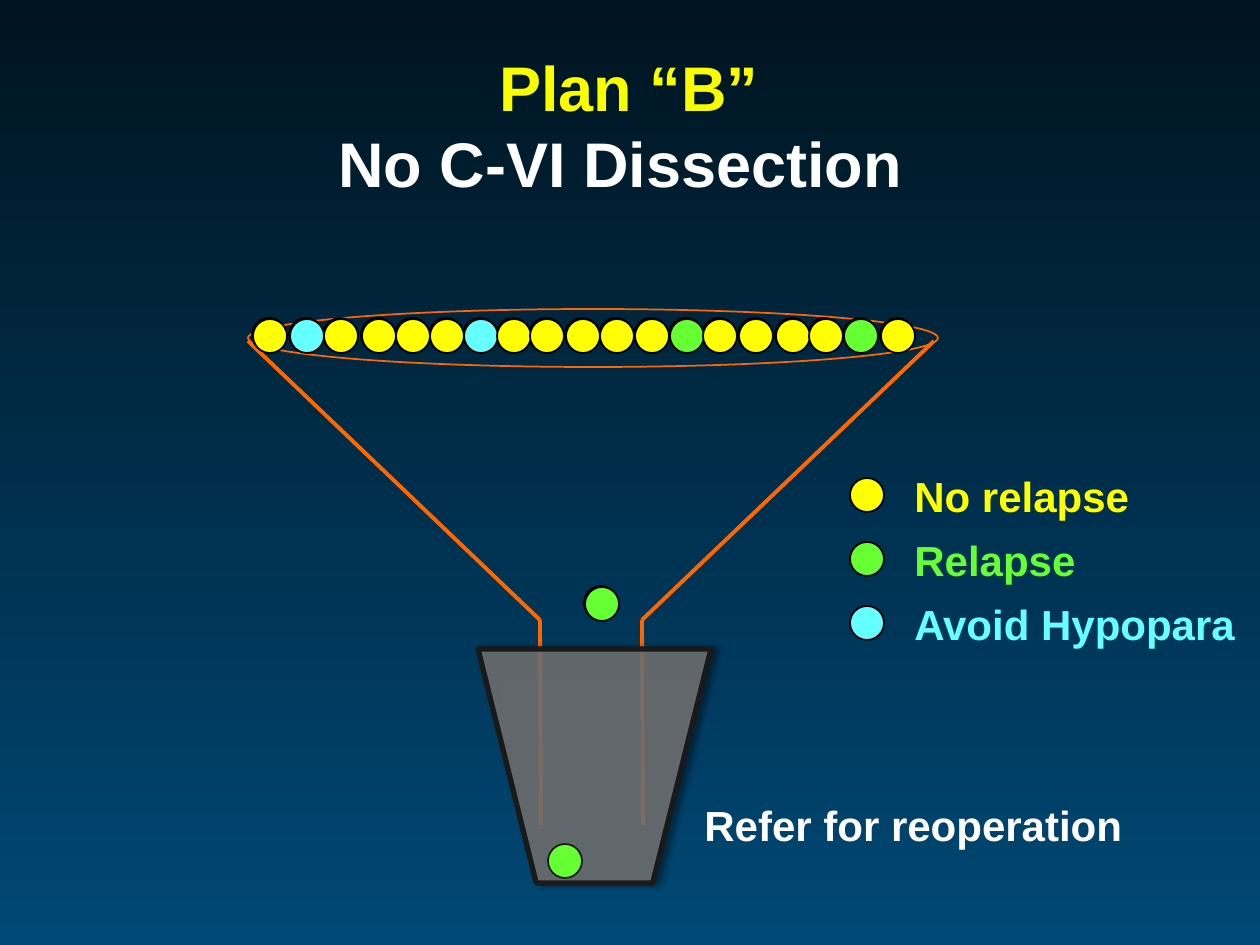
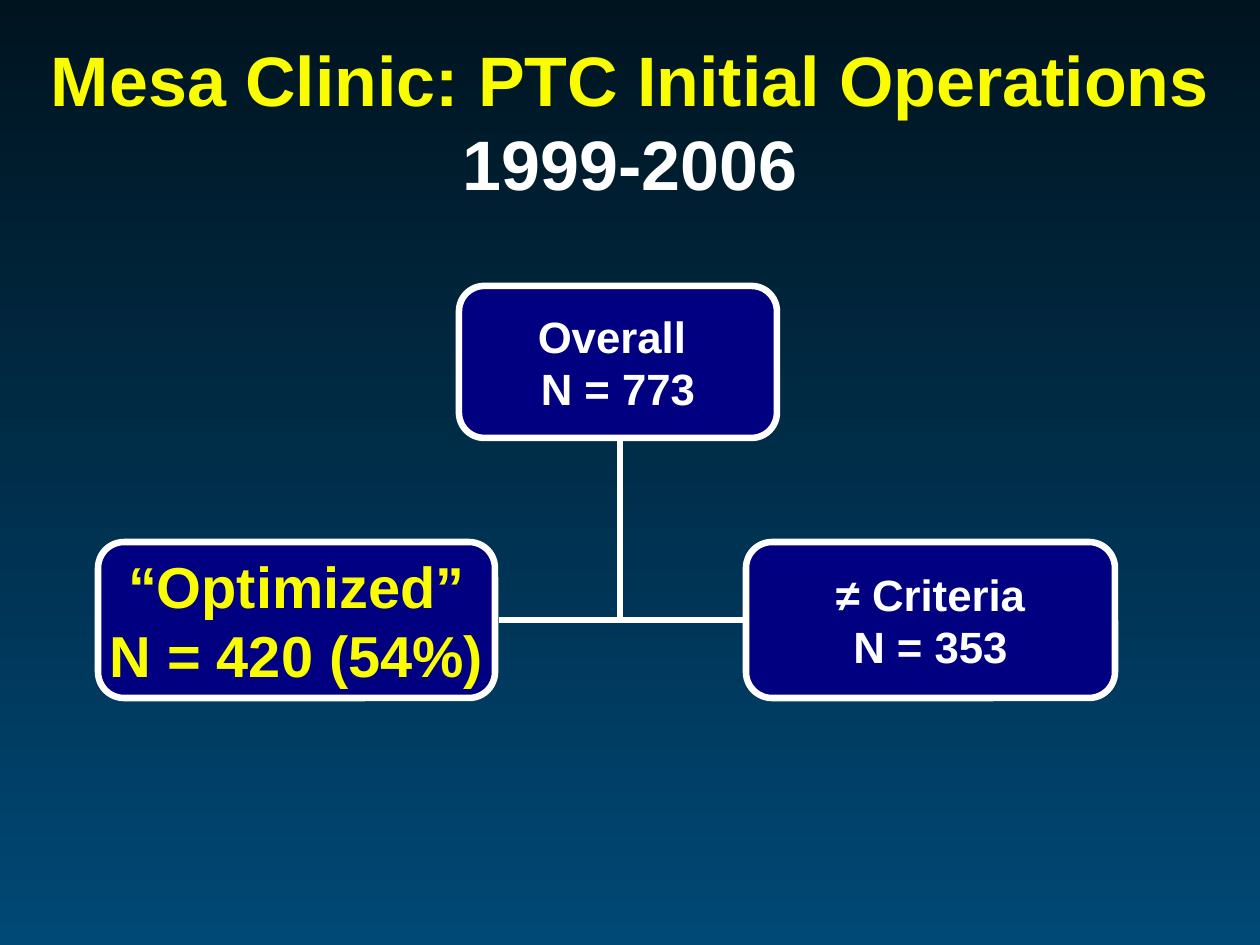
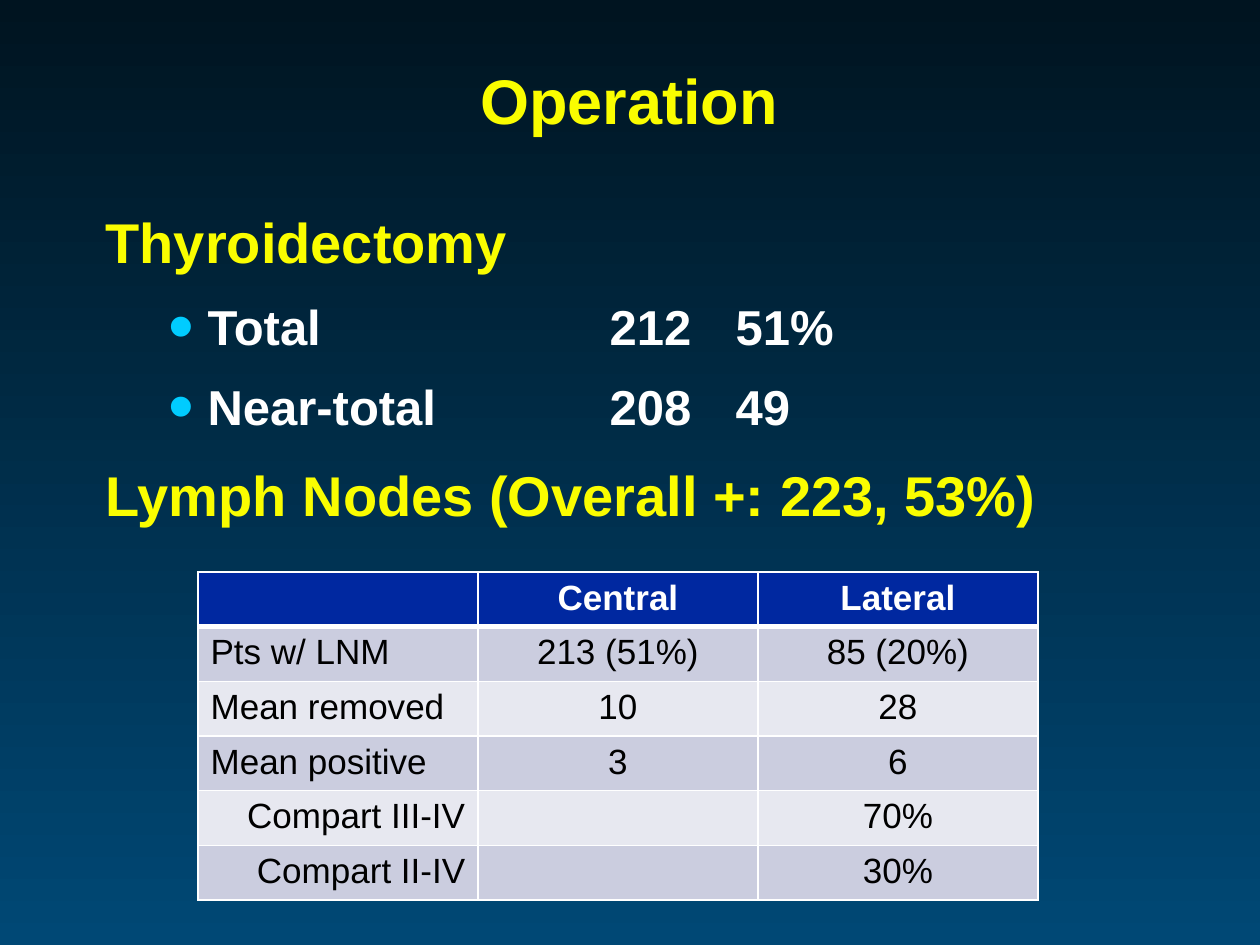
from dataclasses import dataclass

from lxml import etree
from pptx import Presentation
from pptx.dml.color import RGBColor
from pptx.enum.shapes import MSO_CONNECTOR, MSO_SHAPE
from pptx.enum.text import MSO_ANCHOR, MSO_AUTO_SIZE, PP_ALIGN
from pptx.oxml.ns import qn
from pptx.util import Emu, Pt

LEFT, CENTER, RIGHT = PP_ALIGN.LEFT, PP_ALIGN.CENTER, PP_ALIGN.RIGHT
MIDDLE = MSO_ANCHOR.MIDDLE
NO_FIT = MSO_AUTO_SIZE.NONE
STRAIGHT, ELBOW = MSO_CONNECTOR.STRAIGHT, MSO_CONNECTOR.ELBOW
OVAL, RING = MSO_SHAPE.OVAL, MSO_SHAPE.FLOWCHART_CONNECTOR
TRAPEZOID, ROUNDED = MSO_SHAPE.TRAPEZOID, MSO_SHAPE.ROUNDED_RECTANGLE

PX_PER_INCH = 126
TITLE_ONLY, TITLE_AND_BODY = 5, 1
DOT = 34


@dataclass(frozen=True)
class Theme:
    font: str = "Arial"
    sky_top: str = "001420"
    sky_bottom: str = "004875"
    heading: str = "FAFD00"
    white: str = "FFFFFF"
    black: str = "000000"
    no_relapse: str = "FFFF00"
    relapse: str = "66FF33"
    hypopara: str = "66FFFF"
    funnel: str = "FF6600"
    bucket: str = "747474"
    bucket_edge: str = "191919"
    box: str = "000080"
    bullet: str = "00CCFF"
    table_head: str = "0028A0"
    table_bands: tuple = ("CBCDDF", "E7E8F0")
    title_size: int = 36
    wide_title_size: int = 40
    section_size: int = 32
    item_size: int = 28
    label_size: int = 24
    box_size: int = 25
    key_box_size: int = 33
    table_size: int = 20


def px(length):
    return Emu(round(length * 914400 / PX_PER_INCH))


def rgb(color):
    return RGBColor.from_string(color)


def add_xml(parent, tag, **attributes):
    values = {name: str(value) for name, value in attributes.items()}
    return etree.SubElement(parent, qn(f"a:{tag}"), values)


class Deck:
    """Holds the theme and the slide being built."""

    def __init__(self, theme):
        self.theme = theme
        self.slide = None
        self.presentation = Presentation()
        self.presentation.slide_width = px(1260)
        self.presentation.slide_height = px(945)
        sky = self.presentation.slide_master.background.fill
        sky.gradient()
        sky.gradient_angle = 270
        for stop, color in zip(sky.gradient_stops, (theme.sky_top, theme.sky_bottom)):
            stop.color.rgb = rgb(color)

    def new_slide(self, layout=TITLE_ONLY):
        layouts = self.presentation.slide_layouts
        self.slide = self.presentation.slides.add_slide(layouts[layout])

    def style(self, paragraph, size, color, bold=True, align=LEFT):
        paragraph.alignment = align
        font = paragraph.font
        font.name, font.size, font.bold = self.theme.font, Pt(size), bold
        font.color.rgb = rgb(color)

    def place(self, holder, left, top, width, height):
        holder.left, holder.top = px(left), px(top)
        holder.width, holder.height = px(width), px(height)
        holder.text_frame.auto_size = NO_FIT

    def title(self, box, heading, subheading=None, size=None):
        holder = self.slide.shapes.title
        self.place(holder, *box)
        holder.text_frame.vertical_anchor = MIDDLE
        paragraph = holder.text_frame.paragraphs[0]
        self.style(paragraph, size or self.theme.title_size, self.theme.heading, align=CENTER)
        paragraph.add_run().text = heading
        if subheading:
            paragraph.add_line_break()
            run = paragraph.add_run()
            run.text = subheading
            run.font.color.rgb = rgb(self.theme.white)

    def body(self, box, entries):
        """Fill the body with (level, text) entries; level 1 is a bulleted row with tabs."""
        holder = self.slide.placeholders[1]
        self.place(holder, *box)
        frame = holder.text_frame
        for index, (level, text) in enumerate(entries):
            paragraph = frame.paragraphs[0] if index == 0 else frame.add_paragraph()
            paragraph.text, paragraph.level = text, level
            properties = paragraph._p.get_or_add_pPr()
            if level:
                self.bullet(properties)
                size, color = self.theme.item_size, self.theme.white
            else:
                properties.set("marL", str(px(48)))
                properties.set("indent", str(-px(48)))
                add_xml(properties, "buNone")
                size, color = self.theme.section_size, self.theme.heading
            self.style(paragraph, size, color)
            paragraph.line_spacing = 1.2
            paragraph.space_before = Pt(size * 0.2 if index else 0)

    def bullet(self, properties):
        properties.set("marL", str(px(102)))
        properties.set("indent", str(-px(39)))
        add_xml(add_xml(properties, "buClr"), "srgbClr", val=self.theme.bullet)
        add_xml(properties, "buSzPct", val=150000)
        add_xml(properties, "buFont", typeface=self.theme.font)
        add_xml(properties, "buChar", char="•")
        stops = add_xml(properties, "tabLst")
        for column in (504, 630):
            add_xml(stops, "tab", pos=px(column), algn="l")

    def shape(self, kind, box, fill, edge, edge_width=1):
        shape = self.slide.shapes.add_shape(kind, *map(px, box))
        shape.shadow.inherit = False
        if fill:
            shape.fill.solid()
            shape.fill.fore_color.rgb = rgb(fill)
        else:
            shape.fill.background()
        shape.line.color.rgb = rgb(edge)
        shape.line.width = Pt(edge_width)
        return shape

    def dot(self, left, top, color, edge=None):
        self.shape(OVAL, (left, top, DOT, DOT), color, edge or self.theme.black)

    def line(self, start, end, color, width, kind=STRAIGHT):
        line = self.slide.shapes.add_connector(kind, *map(px, start + end))
        line.line.color.rgb = rgb(color)
        line.line.width = Pt(width)
        properties = line._element.spPr
        add_xml(properties, "effectLst")
        if kind == ELBOW:
            properties.find(qn("a:prstGeom")).set("prst", "bentConnector2")

    def label(self, left, top, width, text, color):
        box = self.slide.shapes.add_textbox(px(left), px(top), px(width), px(64))
        box.text_frame.word_wrap = False
        paragraph = box.text_frame.paragraphs[0]
        paragraph.text = text
        self.style(paragraph, self.theme.label_size, color)

    def group_box(self, box, lines, size, color):
        shape = self.shape(ROUNDED, box, self.theme.box, self.theme.white, 3.75)
        frame = shape.text_frame
        frame.word_wrap = False
        frame.vertical_anchor = MIDDLE
        frame.margin_left = frame.margin_right = px(9)
        frame.margin_top = frame.margin_bottom = px(5)
        frame.text = "\n".join(lines)
        for paragraph in frame.paragraphs:
            self.style(paragraph, size, color, align=CENTER)

    def bucket(self, box):
        """Draw a see-through bucket, wide end up, with a soft shadow to the right."""
        theme = self.theme
        shape = self.shape(TRAPEZOID, box, theme.bucket, theme.bucket_edge, 3)
        properties = shape._element.spPr
        properties.find(qn("a:xfrm")).set("flipV", "1")
        tint = properties.find(qn("a:solidFill")).find(qn("a:srgbClr"))
        add_xml(tint, "alpha", val=84000)
        shadow = add_xml(properties.find(qn("a:effectLst")), "outerShdw",
                         blurRad=Pt(4), dist=Pt(3), dir=0, rotWithShape=0)
        add_xml(add_xml(shadow, "srgbClr", val=theme.black), "alpha", val=43000)

    def cell_borders(self, cell, top, bottom):
        properties = cell._tc.get_or_add_tcPr()
        for side, width in (("L", 1), ("R", 1), ("T", top), ("B", bottom)):
            border = add_xml(properties, f"ln{side}", w=Pt(width))
            add_xml(add_xml(border, "solidFill"), "srgbClr", val=self.theme.white)

    def table(self, box, rows):
        """Draw rows under a header; a first cell is set right when its row is a sub-row."""
        theme = self.theme
        table = self.slide.shapes.add_table(len(rows), len(rows[0]), *map(px, box)).table
        for r, row in enumerate(rows):
            fill = theme.table_bands[(r - 1) % 2] if r else theme.table_head
            for c, text in enumerate(row):
                cell = table.cell(r, c)
                self.cell_borders(cell, 3 if r == 1 else 1, 1 if r else 3)
                cell.fill.solid()
                cell.fill.fore_color.rgb = rgb(fill)
                cell.text = text
                first_align = RIGHT if text.startswith("Compart") else LEFT
                self.style(cell.text_frame.paragraphs[0], theme.table_size,
                           theme.black if r else theme.white, bold=r == 0,
                           align=CENTER if c else first_align)


def patient_row(deck, shift, avoided_color):
    """Draw the patients in the funnel mouth and the one falling through."""
    theme = deck.theme
    lefts = (253, 290, 324, 362, 396, 430, 464, 497, 530, 566,
             600, 635, 670, 703, 739, 776, 809, 844, 881)
    special = {1: avoided_color, 6: avoided_color, 12: theme.relapse, 17: theme.relapse}
    for index, left in enumerate(lefts):
        deck.dot(left + shift, 319 + shift, special.get(index, theme.no_relapse))
    deck.dot(585 + shift, 587 + shift, theme.relapse)


def plan_b_slide(deck):
    theme = deck.theme
    deck.new_slide()
    deck.title((94, 48, 1070, 152), "Plan “B”", "No C-VI Dissection ")

    deck.shape(RING, (248, 309, 690, 58), None, theme.funnel)
    for rim, neck in ((248, 540), (934, 642)):
        deck.line((rim, 341), (neck, 620), theme.funnel, 2.25)
        deck.line((neck, 620), (neck + 1, 825), theme.funnel, 2.25)
    patient_row(deck, -1, theme.no_relapse)

    legend = (("No relapse", theme.no_relapse, 242),
              ("Relapse", theme.relapse, 188),
              ("Avoid Hypopara", theme.hypopara, 349))
    for index, (text, color, width) in enumerate(legend):
        deck.dot(850, 478 + 64 * index, color)
        deck.label(902, 464 + 64 * index, width, text, color)

    deck.bucket((478, 649, 233, 234))
    deck.dot(548, 844, theme.relapse, theme.bucket_edge)
    deck.label(692, 793, 447, "Refer for reoperation", theme.white)
    patient_row(deck, 0, theme.hypopara)


def cohort_slide(deck):
    theme = deck.theme
    deck.new_slide()
    deck.title((0, 42, 1260, 157), "Mesa Clinic: PTC Initial Operations", "1999-2006",
               theme.wide_title_size)
    deck.line((755, 620), (620, 440), theme.white, 3, ELBOW)
    deck.line((499, 620), (620, 403), theme.white, 3, ELBOW)
    deck.group_box((459, 286, 318, 152), ("Overall ", "N = 773"),
                   theme.box_size, theme.white)
    deck.group_box((98, 542, 397, 156), ("“Optimized”", "N = 420 (54%)"),
                   theme.key_box_size, theme.heading)
    deck.group_box((746, 542, 369, 156), ("≠ Criteria", "N = 353"),
                   theme.box_size, theme.white)


def operation_slide(deck):
    deck.new_slide(TITLE_AND_BODY)
    deck.title((94, 23, 1070, 152), "Operation")
    deck.body((93, 188, 1079, 360), (
        (0, "Thyroidectomy"),
        (1, "Total\t212\t51%"),
        (1, "Near-total\t208\t49"),
        (0, "Lymph Nodes (Overall +: 223, 53%)"),
    ))
    deck.table((198, 572, 840, 328), (
        ("", "Central", "Lateral"),
        ("Pts w/ LNM", "213 (51%)", "85 (20%)"),
        ("Mean removed", "10", "28"),
        ("Mean positive", "3", "6"),
        ("Compart III-IV", "", "70%"),
        ("Compart II-IV", "", "30%"),
    ))


def main():
    deck = Deck(Theme())
    plan_b_slide(deck)
    cohort_slide(deck)
    operation_slide(deck)
    deck.presentation.save("out.pptx")


if __name__ == "__main__":
    main()
